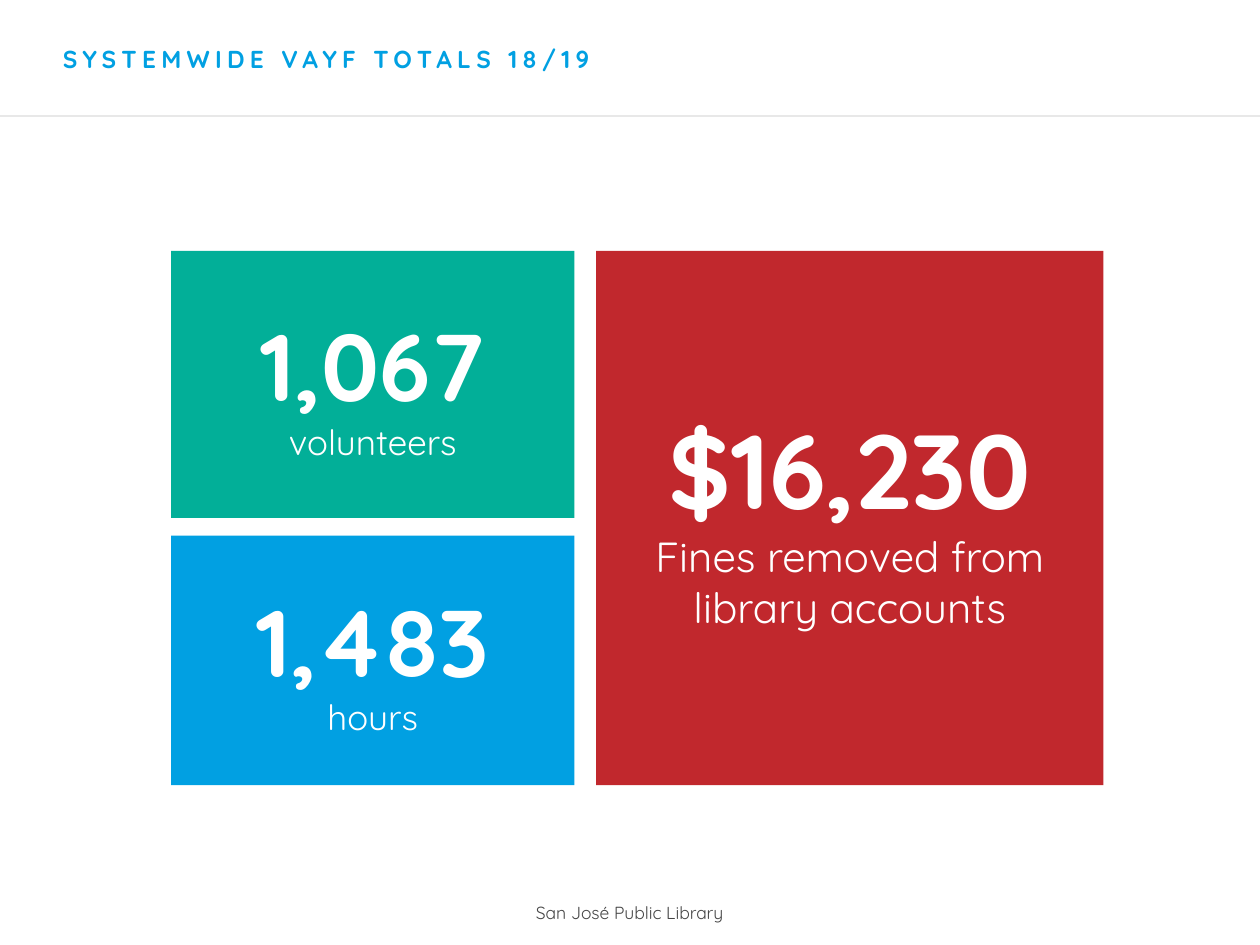
"""Build the systemwide VAYF totals slide."""
from lxml import etree
from pptx import Presentation
from pptx import util as u
from pptx.dml.color import RGBColor
from pptx.enum import shapes, text
from pptx.oxml import ns

COLORS = {
    "blue": "01A0E2",
    "green": "02AF98",
    "red": "C1282D",
    "white": "FFFFFF",
    "footer": "464646",
    "rule": "808080",
}
FONT = "Quicksand"


def color(name):
    return RGBColor.from_string(COLORS[name])


def add_span(para, words, size, ink, bold=False):
    span = para.add_run()
    span.text = words
    span.font.name = FONT
    span.font.size = u.Pt(size)
    span.font.bold = bold
    span.font.color.rgb = color(ink)
    return span


deck = Presentation()
deck.slide_width, deck.slide_height = u.Pt(720), u.Pt(540)
page = deck.slides.add_slide(deck.slide_layouts[6])

rule = page.shapes.add_connector(
    shapes.MSO_CONNECTOR.STRAIGHT, u.Pt(0), u.Pt(66.3), u.Pt(720), u.Pt(66.3)
)
rule.line.width = u.Pt(0.5)
rule.line.color.rgb = color("rule")
rule_fill = rule.line._ln.find(".//" + ns.qn("a:srgbClr"))
etree.SubElement(rule_fill, ns.qn("a:alpha"), val="50000")
etree.SubElement(rule._element.spPr, ns.qn("a:effectLst"))

footer = page.shapes.add_textbox(u.Pt(260.8), u.Pt(512), u.Pt(198), u.Pt(19.4))
footer.text_frame.word_wrap = True
footer.text_frame.auto_size = text.MSO_AUTO_SIZE.SHAPE_TO_FIT_TEXT
para = footer.text_frame.paragraphs[0]
para.alignment = text.PP_ALIGN.CENTER
add_span(para, "San José Public Library", 10, "footer")

title = page.shapes.add_textbox(u.Pt(28.8), u.Pt(23), u.Pt(662.4), u.Pt(28.8))
title.text_frame.word_wrap = True
para = title.text_frame.paragraphs[0]
para.line_spacing = 0.95
span = add_span(para, "SYSTEMWIDE VAYF TOTALS 18/19", 14, "blue", bold=True)
span.font._element.set("spc", "300")

left, top, bottom = 97.8, 143.4, 448.6
cards = [
    (left, top, 230.5, 152.6, "green", "1,067", 54, "volunteers", 20),
    (left, 306, 230.5, bottom - 306, "blue", "1,483", 54, "hours", 20),
    (340.7, top, 289.8, bottom - top, "red", "$16,230", 60,
     "Fines removed from library accounts", 24),
]
for x, y, width, height, fill, total, total_size, label, label_size in cards:
    box = page.shapes.add_shape(
        shapes.MSO_SHAPE.RECTANGLE, u.Pt(x), u.Pt(y), u.Pt(width), u.Pt(height)
    )
    box.shadow.inherit = False
    box.fill.solid()
    box.fill.fore_color.rgb = color(fill)
    box.line.fill.background()
    frame = box.text_frame
    frame.word_wrap = True
    frame.vertical_anchor = text.MSO_ANCHOR.MIDDLE
    for para, words, size, bold in (
        (frame.paragraphs[0], total, total_size, True),
        (frame.add_paragraph(), label, label_size, False),
    ):
        para.alignment = text.PP_ALIGN.CENTER
        add_span(para, words, size, "white", bold)

deck.save("out.pptx")
